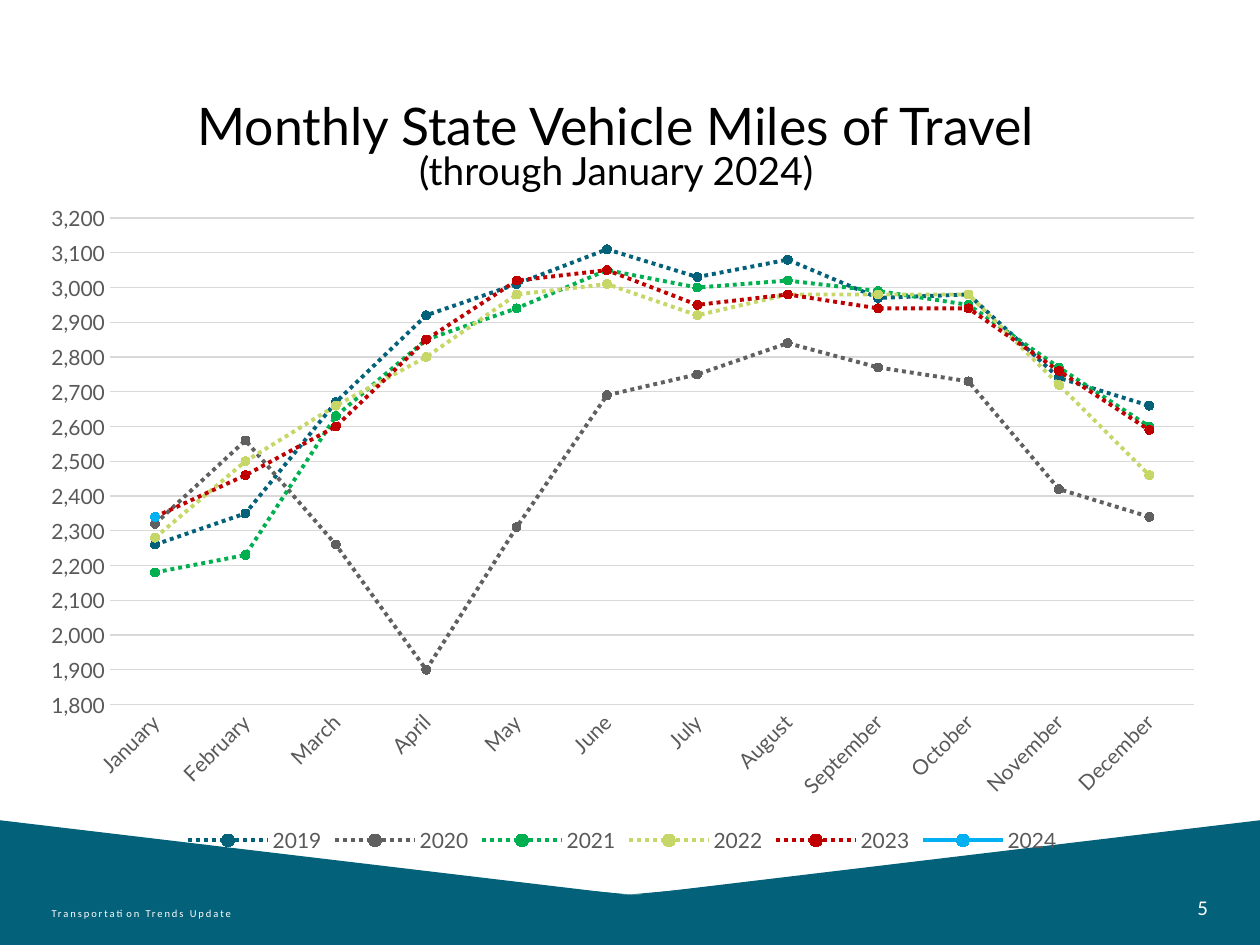
from lxml import etree
from pptx import Presentation
from pptx import util as u
from pptx.chart.data import CategoryChartData
from pptx.dml.color import RGBColor
from pptx.enum import chart as ch, dml, text
from pptx.oxml.ns import qn

Pt = u.Pt
TEAL = RGBColor(0x03, 0x61, 0x7A)
GRAY = RGBColor(0x60, 0x60, 0x60)
GREEN = RGBColor(0x00, 0xB0, 0x50)
LIME = RGBColor(0xC6, 0xD6, 0x67)
RED = RGBColor(0xC0, 0x00, 0x00)
SKY = RGBColor(0x00, 0xB0, 0xF0)
WHITE = RGBColor(0xFF, 0xFF, 0xFF)
BLACK = RGBColor(0x00, 0x00, 0x00)
LABEL = RGBColor(0x59, 0x59, 0x59)
GRID = RGBColor(0xD9, 0xD9, 0xD9)

SLIDE_W, SLIDE_H = 720, 540
MONTHS = ["January", "February", "March", "April", "May", "June", "July",
          "August", "September", "October", "November", "December"]
MILES = {
    "2019": (TEAL, [2260, 2350, 2670, 2920, 3010, 3110,
                    3030, 3080, 2970, 2980, 2740, 2660]),
    "2020": (GRAY, [2320, 2560, 2260, 1900, 2310, 2690,
                    2750, 2840, 2770, 2730, 2420, 2340]),
    "2021": (GREEN, [2180, 2230, 2630, 2850, 2940, 3050,
                     3000, 3020, 2990, 2950, 2770, 2600]),
    "2022": (LIME, [2280, 2500, 2660, 2800, 2980, 3010,
                    2920, 2980, 2980, 2980, 2720, 2460]),
    "2023": (RED, [2340, 2460, 2600, 2850, 3020, 3050,
                   2950, 2980, 2940, 2940, 2760, 2590]),
    "2024": (SKY, [2340] + [None] * 11),
}
PLOT_AREA = {"x": 0.07, "y": 0.04, "w": 0.91, "h": 0.73}


def set_all(target, values):
    for name, value in values.items():
        setattr(target, name, value)


def set_font(font, size, color, name="Lato"):
    set_all(font, {"size": Pt(size), "name": name})
    font.color.rgb = color


def add_band(slide, points):
    """Add a closed teal outline through points."""
    corners = [(Pt(x), Pt(y)) for x, y in points]
    builder = slide.shapes.build_freeform(*corners[0])
    builder.add_line_segments(corners[1:], close=True)
    band = builder.convert_to_shape()
    band.shadow.inherit = False
    band.fill.solid()
    band.fill.fore_color.rgb = TEAL
    band.line.fill.background()


def add_text(slide, box, lines, color, align, font="Lato", side=7.2,
             spacing=None, tracking=None):
    """Add bottom-anchored text; lines holds (wording, size) pairs."""
    frame = slide.shapes.add_textbox(*map(Pt, box)).text_frame
    set_all(frame, {
        "word_wrap": True, "vertical_anchor": text.MSO_ANCHOR.BOTTOM,
        "margin_left": Pt(side), "margin_right": Pt(side),
        "margin_top": Pt(3.6), "margin_bottom": Pt(3.6)})
    for index, (wording, size) in enumerate(lines):
        paragraph = frame.add_paragraph() if index else frame.paragraphs[0]
        set_all(paragraph, {"alignment": align, "line_spacing": spacing})
        run = paragraph.add_run()
        run.text = wording
        set_font(run.font, size, color, font)
        if tracking:
            run.font._element.set("spc", str(round(tracking * 100)))


def style_axes(chart):
    months, miles = chart.category_axis, chart.value_axis
    for axis in (months, miles):
        set_all(axis, {"major_tick_mark": ch.XL_TICK_MARK.NONE,
                       "minor_tick_mark": ch.XL_TICK_MARK.NONE})
        set_font(axis.tick_labels.font, 12, LABEL)
    set_all(miles, {"minimum_scale": 1800, "maximum_scale": 3200,
                    "major_unit": 100, "has_major_gridlines": True})
    set_all(miles.tick_labels, {"number_format": "#,##0",
                                "number_format_is_linked": False})
    miles.format.line.fill.background()
    for line in (months.format.line, miles.major_gridlines.format.line):
        line.color.rgb = GRID
        line.width = Pt(0.75)
    slant = months._element.find(qn("c:txPr")).find(qn("a:bodyPr"))
    slant.set("rot", str(-45 * 60000))


def style_series(series, color):
    set_all(series, {"smooth": False})
    line = series.format.line
    line.color.rgb = color
    line.width = Pt(2.25)
    if series.name != "2024":
        line.dash_style = dml.MSO_LINE.ROUND_DOT
    marker = series.marker
    set_all(marker, {"style": ch.XL_MARKER_STYLE.CIRCLE, "size": 5})
    marker.format.fill.solid()
    marker.format.fill.fore_color.rgb = color
    marker.format.line.color.rgb = color


def place_plot(chart):
    """Fix the inner plot area as fractions of the chart."""
    plot_area = chart._chartSpace.chart.plotArea
    layout = plot_area.find(qn("c:layout"))
    if layout is None:
        layout = etree.Element(qn("c:layout"))
        plot_area.insert(0, layout)
    manual = etree.SubElement(layout, qn("c:manualLayout"))
    settings = {"layoutTarget": "inner", "xMode": "edge", "yMode": "edge",
                **PLOT_AREA}
    for name, value in settings.items():
        etree.SubElement(manual, qn("c:" + name)).set("val", str(value))


def add_miles_chart(slide, box):
    data = CategoryChartData(number_format="#,##0")
    data.categories = MONTHS
    for year, (_, values) in MILES.items():
        data.add_series(year, values)
    chart = slide.shapes.add_chart(
        ch.XL_CHART_TYPE.LINE_MARKERS, *map(Pt, box), data).chart
    set_font(chart.font, 10, BLACK)
    set_all(chart, {"has_title": False, "has_legend": True})
    set_all(chart.legend, {"position": ch.XL_LEGEND_POSITION.BOTTOM,
                           "include_in_layout": False})
    set_font(chart.legend.font, 12, LABEL)
    chart.plots[0].vary_by_categories = False
    style_axes(chart)
    for series in chart.plots[0].series:
        style_series(series, MILES[series.name][0])
    place_plot(chart)


def main():
    deck = Presentation()
    set_all(deck, {"slide_width": Pt(SLIDE_W), "slide_height": Pt(SLIDE_H)})
    slide = deck.slides.add_slide(deck.slide_layouts[6])

    add_band(slide, [(0, 468.7), (357, 511.2), (365, 511.2),
                     (SLIDE_W, 468.7), (SLIDE_W, SLIDE_H), (0, SLIDE_H)])
    footer = {"color": WHITE, "font": "Calibri", "side": 0, "tracking": 1.1}
    add_text(slide, (29.5, 500.4, 192.2, 28.8),
             [("Transportation Trends Update", 6)],
             align=text.PP_ALIGN.LEFT, **footer)
    add_text(slide, (620.6, 500.4, 69.8, 28.8), [("5", 12)],
             align=text.PP_ALIGN.RIGHT, **footer)

    wing = [(0, 512), (360.5, 511.2), (0, 478.8)]
    add_band(slide, wing)
    add_band(slide, [(SLIDE_W - x, y) for x, y in wing])

    add_miles_chart(slide, (15.1, 109.4, 681.1, 380.9))
    add_text(slide, (41.8, 54, 620.6, 59.8),
             [("Monthly State Vehicle Miles of Travel", 29.6),
              ("(through January 2024)", 22.2)],
             BLACK, text.PP_ALIGN.CENTER, spacing=0.8)
    deck.save("out.pptx")


if __name__ == "__main__":
    main()
